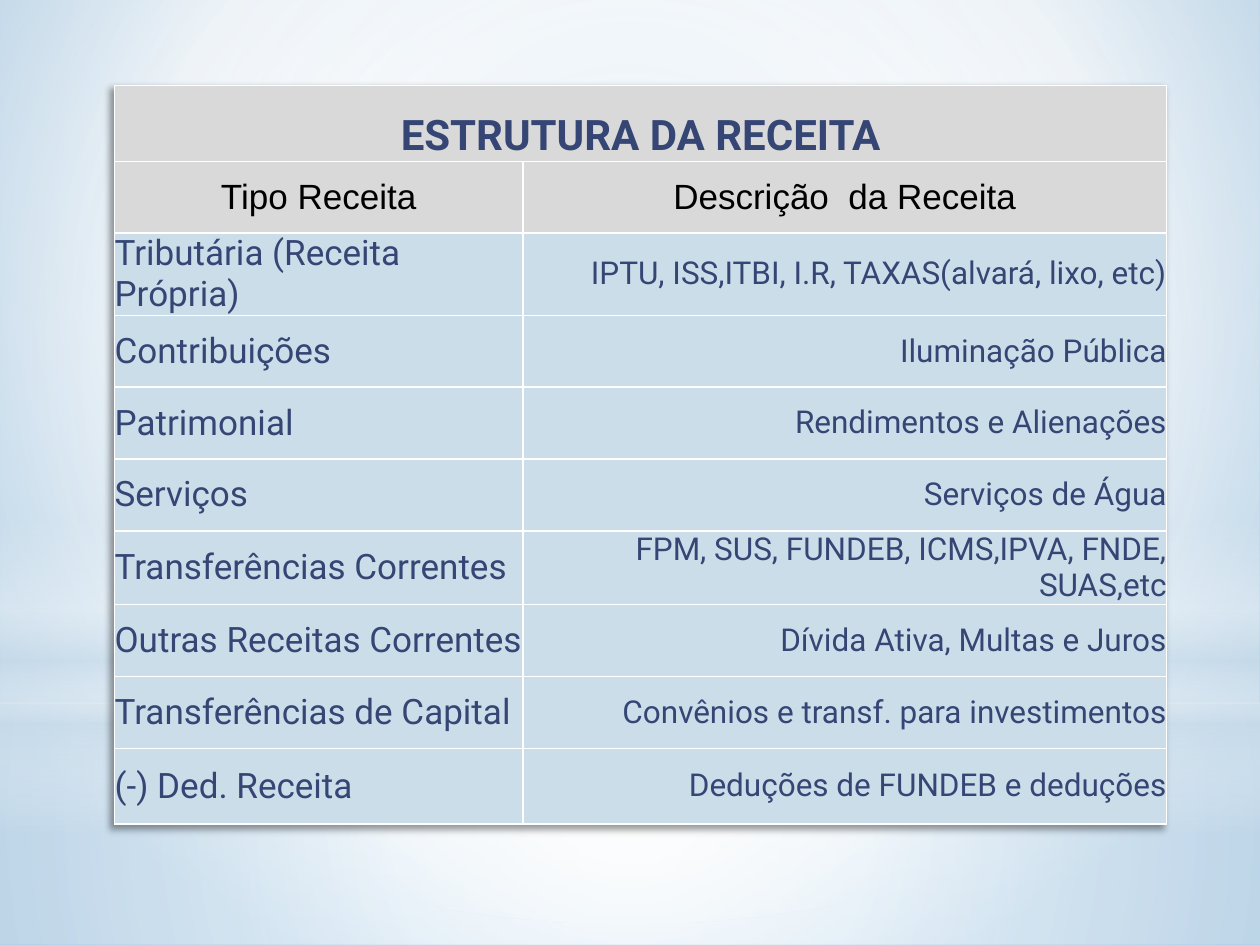
"""Builds a slide with a table of public revenue types on a soft sky ground."""
import pptx
import pptx.util
import pptx.oxml
import pptx.oxml.ns
import pptx.dml.color
import pptx.enum.shapes
import pptx.enum.text

WIDE, HIGH = 10, 7.5
NAVY, PALE, GREY, WHITE = "354675", "CCDDEA", "D9D9D9", "FFFFFF"
KINDS = pptx.enum.shapes.MSO_SHAPE
ALIGN = pptx.enum.text.PP_ALIGN
ANCHOR = pptx.enum.text.MSO_ANCHOR
CENTRE = (50, 50, 50, 50)
COLS = (3.24, 5.11)
ROWS = (0.6,) + (0.57,) * 8 + (0.6,)

TITLE = "ESTRUTURA DA RECEITA"
HEADS = ("Tipo Receita", "Descrição  da Receita")
ITEMS = (
    ("Tributária (Receita Própria)", "IPTU, ISS,ITBI, I.R, TAXAS(alvará, lixo, etc)"),
    ("Contribuições", "Iluminação Pública"),
    ("Patrimonial", "Rendimentos e Alienações"),
    ("Serviços", "Serviços de Água"),
    ("Transferências Correntes", "FPM, SUS, FUNDEB, ICMS,IPVA, FNDE, SUAS,etc"),
    ("Outras Receitas Correntes", "Dívida Ativa, Multas e Juros"),
    ("Transferências de Capital", "Convênios e transf. para investimentos"),
    ("(-) Ded. Receita", "Deduções de FUNDEB e deduções"),
)
GLOWS = (
    (KINDS.RECTANGLE, 0.744, 0.256, CENTRE,
     ((0, WHITE, 91), (37, WHITE, 76), (100, PALE, 79))),
    (KINDS.RECTANGLE, 0, 0.744, CENTRE,
     ((0, WHITE, 89), (48, WHITE, 62), (100, PALE, 79))),
    (KINDS.RECTANGLE, 0.549, 0.333, None,
     ((0, WHITE, 0), (29, WHITE, 30), (45, PALE, 40),
      (55, WHITE, 26), (65, PALE, 60), (100, WHITE, 0))),
    (KINDS.OVAL, 0.233, 0.744, CENTRE, ((0, WHITE, 100), (56, WHITE, 0))),
)


def color(code):
    return pptx.dml.color.RGBColor.from_string(code)


def inch(size):
    return pptx.util.Inches(size)


def node(tag, body):
    """Makes a drawing element from its opening tag and its body."""
    space = pptx.oxml.ns.nsdecls("a")
    return pptx.oxml.parse_xml(f"<a:{tag} {space}>{body}</a:{tag.split()[0]}>")


def blend(stops, focus):
    """Makes a round gradient about focus, or a downward one without it."""
    marks = "".join(
        f'<a:gs pos="{pos * 1000}"><a:srgbClr val="{code}">'
        f'<a:alpha val="{alpha * 1000}"/></a:srgbClr></a:gs>'
        for pos, code, alpha in stops)
    way = '<a:lin ang="5400000" scaled="0"/>'
    if focus:
        edge = " ".join(f'{side}="{part * 1000}"' for side, part in zip("ltrb", focus))
        way = f'<a:path path="circle"><a:fillToRect {edge}/></a:path>'
    return node('gradFill rotWithShape="1"', f"<a:gsLst>{marks}</a:gsLst>{way}")


def swap(root, fill):
    """Puts a gradient in the place of the plain fill under root."""
    old = root.find(".//" + pptx.oxml.ns.qn("a:solidFill"))
    old.getparent().replace(old, fill)


def ground(slide):
    slide.background.fill.solid()
    slide.background.fill.fore_color.rgb = color(WHITE)
    stops = ((0, "BCD5E8", 100), (60, WHITE, 100), (100, "82B6DE", 100))
    swap(slide.element, blend(stops, (20, 10, 20, 60)))


def glow(slide, kind, top, share, focus, stops):
    """Adds a full-width soft light, placed by shares of the height."""
    shape = slide.shapes.add_shape(
        kind, 0, inch(top * HIGH), inch(WIDE), inch(share * HIGH))
    shape.shadow.inherit = False
    shape.line.fill.background()
    shape.fill.solid()
    swap(shape.element.spPr, blend(stops, focus))


def write(cell, text, fill, size, align, font="Roboto", ink=NAVY, bold=False):
    """Sets the text, borders and fill of one cell."""
    for side in "LRTB":
        cell._tc.get_or_add_tcPr().append(node(
            f'ln{side} w="12700"',
            f'<a:solidFill><a:srgbClr val="{WHITE}"/></a:solidFill>'))
    cell.fill.solid()
    cell.fill.fore_color.rgb = color(fill)
    cell.margin_left = cell.margin_right = cell.margin_top = cell.margin_bottom = 0
    cell.vertical_anchor = ANCHOR.MIDDLE
    para = cell.text_frame.paragraphs[0]
    para.text = text
    para.alignment = align
    for face in [para.font] + [run.font for run in para.runs]:
        face.name, face.size, face.bold = font, pptx.util.Pt(size), bold
        face.color.rgb = color(ink)


def shade(table):
    """Gives the table a soft shadow to the lower left."""
    table._tbl.tblPr.insert(0, node(
        "effectLst",
        '<a:outerShdw blurRad="50800" dist="38100" dir="8100000" algn="tr" '
        'rotWithShape="0"><a:srgbClr val="000000"><a:alpha val="40000"/>'
        '</a:srgbClr></a:outerShdw>'))


def grid(slide):
    """Adds the revenue table."""
    table = slide.shapes.add_table(
        len(ROWS), len(COLS), inch(0.91), inch(0.68),
        inch(sum(COLS)), inch(sum(ROWS))).table
    table.first_row = table.horz_banding = False
    shade(table)
    for col, size in zip(table.columns, COLS):
        col.width = inch(size)
    for row, size in zip(table.rows, ROWS):
        row.height = inch(size)
    for col, text in enumerate((TITLE, "")):
        write(table.cell(0, col), text, GREY, 24, ALIGN.CENTER, bold=True)
    table.cell(0, 0).merge(table.cell(0, 1))
    table.cell(0, 0).vertical_anchor = ANCHOR.BOTTOM
    for col, text in enumerate(HEADS):
        write(table.cell(1, col), text, GREY, 20, ALIGN.CENTER, "Arial", "000000")
    for row, (kind, note) in enumerate(ITEMS, 2):
        write(table.cell(row, 0), kind, PALE, 20, ALIGN.LEFT)
        write(table.cell(row, 1), note, PALE, 18, ALIGN.RIGHT)


def main():
    deck = pptx.Presentation()
    deck.slide_width, deck.slide_height = inch(WIDE), inch(HIGH)
    slide = deck.slides.add_slide(deck.slide_layouts[6])
    ground(slide)
    for light in GLOWS:
        glow(slide, *light)
    grid(slide)
    deck.save("out.pptx")


if __name__ == "__main__":
    main()
